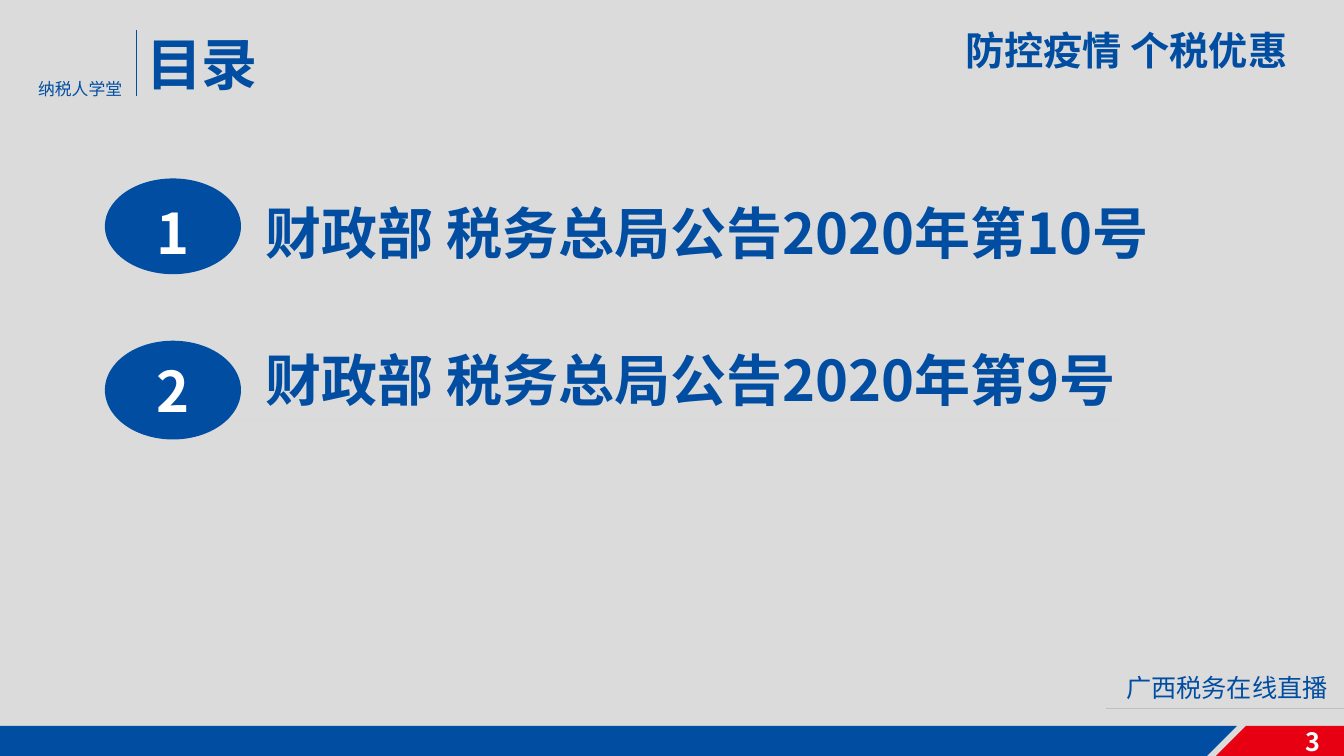
from dataclasses import dataclass

from lxml.etree import SubElement
from pptx import Presentation
from pptx.dml.color import RGBColor
from pptx.enum.shapes import MSO_CONNECTOR, MSO_SHAPE
from pptx.enum.text import MSO_ANCHOR, MSO_AUTO_SIZE, PP_ALIGN
from pptx.oxml.ns import qn
from pptx.util import Inches, Pt

COLUMNS, ROWS = 13.33, 7.5
CELL = Inches(1)
FONT = "Noto Sans CJK SC"
BLUE = RGBColor(0x00, 0x4D, 0xA1)
RED = RGBColor(0xE6, 0x00, 0x12)
WHITE = RGBColor(0xFF, 0xFF, 0xFF)
BACKGROUND = RGBColor(0xDB, 0xDB, 0xDB)
RULE_GRAY = RGBColor(0xBF, 0xBF, 0xBF)
PALE_GRAY = RGBColor(0xD9, 0xD9, 0xD9)


@dataclass
class Box:
    column: float
    row: float
    width: float
    height: float

    def inner(self, column, row, width, height):
        return Box(self.column + column, self.row + row, width, height)

    def lengths(self):
        return [round(value * CELL) for value in (self.column, self.row, self.width, self.height)]


def write(shape, text, size, color=BLUE, bold=False, align=PP_ALIGN.LEFT, anchor=MSO_ANCHOR.TOP, wrap=True):
    frame = shape.text_frame
    frame.word_wrap = wrap
    frame.auto_size = MSO_AUTO_SIZE.NONE
    frame.vertical_anchor = anchor
    paragraph = frame.paragraphs[0]
    paragraph.alignment = align
    run = paragraph.add_run()
    run.text = text
    run.font.size = Pt(size)
    run.font.bold = bold
    run.font.color.rgb = color
    run.font.name = FONT
    SubElement(run.font._element, qn("a:ea"), typeface=FONT)


def add_text(shapes, box, text, size, **style):
    write(shapes.add_textbox(*box.lengths()), text, size, **style)


def paint(shape, color):
    shape.shadow.inherit = False
    shape.fill.solid()
    shape.fill.fore_color.rgb = color
    shape.line.fill.background()


def add_shape(shapes, kind, box, color):
    shape = shapes.add_shape(kind, *box.lengths())
    paint(shape, color)
    return shape


def add_rule(shapes, box, color):
    left, top, width, height = box.lengths()
    rule = shapes.add_connector(MSO_CONNECTOR.STRAIGHT, left, top, left + width, top + height)
    rule.line.color.rgb = color
    rule.line.width = Pt(0.5)
    SubElement(rule._element.spPr, qn("a:effectLst"))


def add_band(shapes, box, corners, color):
    points = [(round((box.column + x) * CELL), round((box.row + y) * CELL)) for x, y in corners]
    builder = shapes.build_freeform(*points[0])
    builder.add_line_segments(points[1:], close=True)
    paint(builder.convert_to_shape(), color)


def draw_header(shapes, box):
    add_rule(shapes, box.inner(1.35, 0.3, 0, 0.65), BLUE)
    add_text(shapes, box.inner(0.28, 0.73, 1.08, 0.3), "纳税人学堂", 12)
    add_text(shapes, box.inner(1.35, 0.24, 1.32, 0.77), "目录", 40, bold=True, wrap=False)
    topic = add_shape(shapes, MSO_SHAPE.ROUNDED_RECTANGLE, box.inner(9.11, 0.16, 4.12, 0.67), BACKGROUND)
    write(topic, "防控疫情 个税优惠", 28, bold=True, align=PP_ALIGN.CENTER, anchor=MSO_ANCHOR.MIDDLE)


def draw_entry(shapes, box, number, title, title_row, number_row):
    add_text(shapes, box.inner(1.5, title_row, 10.17, 0.77), title, 40, bold=True)
    add_shape(shapes, MSO_SHAPE.OVAL, box.inner(0, 0, 1.35, box.height), BLUE)
    add_text(shapes, box.inner(0, number_row, 1.36, 0.77), number, 40,
             color=WHITE, bold=True, align=PP_ALIGN.CENTER)


def draw_contents(shapes, box):
    second = box.inner(0, 1.61, box.width, 0.98)
    second_group = shapes.add_group_shape().shapes
    draw_entry(second_group, second, "2", "财政部 税务总局公告2020年第9号", 0, 0.11)
    add_rule(second_group, second.inner(1.27, 0.79, 8.86, 0), PALE_GRAY)
    first = box.inner(0, 0, box.width, 0.95)
    draw_entry(shapes.add_group_shape().shapes, first, "1", "财政部 税务总局公告2020年第10号", 0.15, 0.15)


def draw_footer(shapes, box):
    slant, band = 0.32, 0.32
    blue_end, red_start = 12.27, 12.36
    stripe = box.inner(0, 0.58, box.width, band)
    add_band(shapes, stripe, [(0, 0), (blue_end, 0), (blue_end - slant, band), (0, band)], BLUE)
    add_band(shapes, stripe,
             [(red_start, 0), (box.width, 0), (box.width, band), (red_start - slant, band)], RED)
    add_rule(shapes, box.inner(10.97, 0.41, box.width - 10.97, 0), RULE_GRAY)
    add_text(shapes, box.inner(11.07, 0, 2.59, 0.4), "广西税务在线直播", 18)
    add_text(shapes, box.inner(10.19, 0.54, 3, 0.4), "3", 18, color=WHITE, bold=True,
             align=PP_ALIGN.RIGHT, anchor=MSO_ANCHOR.MIDDLE)


def main():
    presentation = Presentation()
    presentation.slide_width = round(COLUMNS * CELL)
    presentation.slide_height = round(ROWS * CELL)
    slide = presentation.slides.add_slide(presentation.slide_layouts[6])
    slide.background.fill.solid()
    slide.background.fill.fore_color.rgb = BACKGROUND
    draw_header(slide.shapes, Box(0, 0, COLUMNS, 1.1))
    draw_contents(slide.shapes, Box(1.04, 1.77, 11.67, 2.59))
    draw_footer(slide.shapes, Box(0, 6.62, COLUMNS, 0.88))
    presentation.save("out.pptx")


if __name__ == "__main__":
    main()
